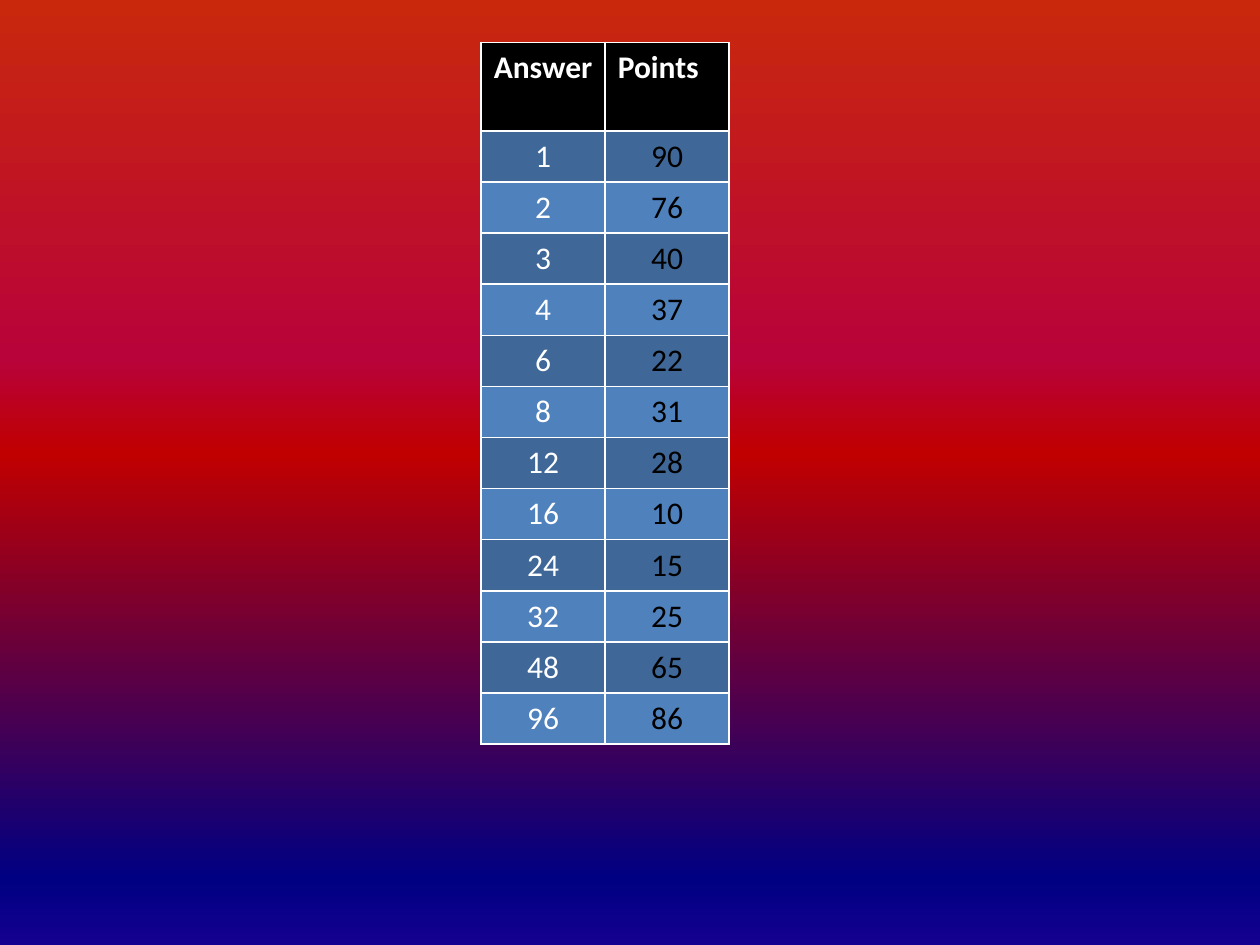
from typing import NamedTuple

from pptx import Presentation
from pptx.dml.color import RGBColor
from pptx.enum.text import PP_ALIGN
from pptx.oxml.ns import qn
from pptx.oxml.xmlchemy import OxmlElement
from pptx.util import Cm, Pt

LEFT, CENTER = PP_ALIGN.LEFT, PP_ALIGN.CENTER
BLANK_LAYOUT = 6
COLORS = {
    "header": "000000",
    "odd": "3F6797",
    "even": "4F81BD",
    "light": "FFFFFF",
    "dark": "000000",
}


class GradientStop(NamedTuple):
    percent: int
    color: str


class Score(NamedTuple):
    answer: int
    points: int


BACKGROUND = [
    GradientStop(0, "C9280D"),
    GradientStop(38, "B8023A"),
    GradientStop(48, "C00000"),
    GradientStop(93, "000082"),
    GradientStop(100, "150090"),
]
SCORES = [
    Score(1, 90), Score(2, 76), Score(3, 40), Score(4, 37),
    Score(6, 22), Score(8, 31), Score(12, 28), Score(16, 10),
    Score(24, 15), Score(32, 25), Score(48, 65), Score(96, 86),
]


def add_color(parent, color: str) -> None:
    element = OxmlElement("a:srgbClr")
    element.set("val", color)
    parent.append(element)


def paint_background(slide, stops: list[GradientStop]) -> None:
    fill = slide.background.fill
    fill.gradient()
    fill.gradient_angle = 270  # counter-clockwise, so the colours run downwards
    stop_list = slide.element.find(".//" + qn("a:gsLst"))
    for old_stop in list(stop_list):
        stop_list.remove(old_stop)
    for stop in stops:
        element = OxmlElement("a:gs")
        element.set("pos", str(stop.percent * 1000))
        add_color(element, stop.color)
        stop_list.append(element)


def add_borders(cell, color: str) -> None:
    properties = cell._tc.get_or_add_tcPr()
    for side in ("lnL", "lnR", "lnT", "lnB"):
        line = OxmlElement(f"a:{side}")
        line.set("w", str(Pt(1)))
        solid = OxmlElement("a:solidFill")
        add_color(solid, color)
        line.append(solid)
        properties.append(line)


def write_cell(cell, text: str, fill: str, color: str,
               align: PP_ALIGN = CENTER, bold: bool = False) -> None:
    add_borders(cell, COLORS["light"])
    cell.fill.solid()
    cell.fill.fore_color.rgb = RGBColor.from_string(fill)
    para = cell.text_frame.paragraphs[0]
    para.text = text
    para.alignment = align
    font = para.runs[0].font
    font.name, font.size, font.bold = "Calibri", Pt(18), bold
    font.color.rgb = RGBColor.from_string(color)


def add_score_table(slide, scores: list[Score]) -> None:
    header_height, row_height, column_width = Cm(1.78), Cm(1.03), Cm(2.5)
    frame = slide.shapes.add_table(
        len(scores) + 1, 2, Cm(9.7), Cm(0.86),
        2 * column_width, header_height + len(scores) * row_height)
    table = frame.table
    for column in table.columns:
        column.width = column_width
    for row in table.rows:
        row.height = row_height
    table.rows[0].height = header_height

    # Header row
    for column, title in enumerate(("Answer", "Points")):
        write_cell(table.cell(0, column), title, COLORS["header"],
                   COLORS["light"], LEFT, bold=True)

    # Score rows in alternating blues
    for row, score in enumerate(scores, start=1):
        fill = COLORS["odd" if row % 2 else "even"]
        write_cell(table.cell(row, 0), str(score.answer), fill, COLORS["light"])
        write_cell(table.cell(row, 1), str(score.points), fill, COLORS["dark"])


def main() -> None:
    deck = Presentation()
    deck.slide_width, deck.slide_height = Cm(25.4), Cm(19.05)
    slide = deck.slides.add_slide(deck.slide_layouts[BLANK_LAYOUT])
    paint_background(slide, BACKGROUND)
    add_score_table(slide, SCORES)
    deck.save("out.pptx")


if __name__ == "__main__":
    main()
